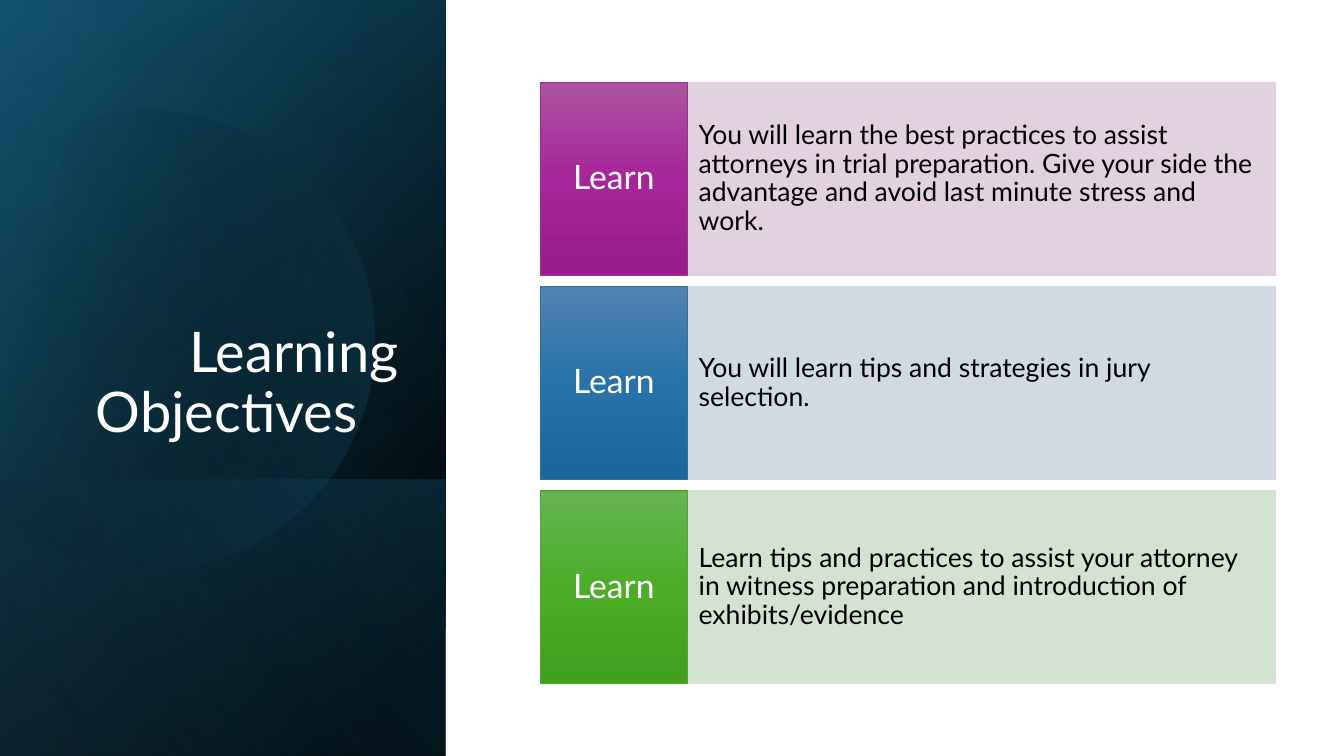
import math
from lxml import etree
from pptx import Presentation
from pptx.dml.color import RGBColor
from pptx.enum import shapes, text
from pptx.oxml import ns
from pptx.util import Inches, Pt

FONT = "Lato"
BLACK = RGBColor(0x00, 0x00, 0x00)
WHITE = RGBColor(0xFF, 0xFF, 0xFF)
NAVY = RGBColor(0x10, 0x48, 0x62)
TEAL = RGBColor(0x15, 0x60, 0x82)
SKY = RGBColor(0x46, 0xB1, 0xE1)


def rgb(value):
    return RGBColor.from_string(value)


TITLE = "Learning Objectives\t"
OBJECTIVES = [
    ("Learn",
     "You will learn the best practices to assist attorneys in trial preparation. "
     "Give your side the advantage and avoid last minute stress and work.",
     rgb("DFCDDC"), rgb("A02B93"), (rgb("AC53A0"), rgb("A62598"), rgb("991C8B"))),
    ("Learn",
     "You will learn tips and strategies in jury selection.",
     rgb("CDD6E0"), rgb("2C71A4"), (rgb("5382AF"), rgb("2772A9"), rgb("1D669C"))),
    ("Learn",
     "Learn tips and practices to assist your attorney in witness preparation "
     "and introduction of exhibits/evidence",
     rgb("D0E1CD"), rgb("4EA72E"), (rgb("66B354"), rgb("4BAD28"), rgb("409F1E"))),
]

PANEL_W, SLIDE_H = 4.42, 7.5
BASE_LAYERS = [
    (0, [(8, BLACK, 100), (100, NAVY, 100)], 50),
    (0, [(0, BLACK, 0), (99, TEAL, 46)], 30),
    (4.76, [(2, TEAL, 29), (100, BLACK, 30)], 130),
]
TOP_LAYER = (0, [(0, BLACK, 0), (99, SKY, 11)], 120)

DISC_CENTER = (1.585, 3.345)
DISC_ROTATION = 343.9
DISC_STOPS = [(29, BLACK, 0), (100, TEAL, 43)]
DISC_START = (1.49, 1.1)
DISC_SEGMENTS = [
    [(2.46, 1.12), (3.35, 1.77), (3.63, 2.75)],
    [(3.97, 3.97), (3.28, 5.23), (2.07, 5.58)],
    [(1.31, 5.8), (0.53, 5.61), (-0.03, 5.14)],
    [(-0.15, 5.03)],
    [(-0.15, 1.75)],
    [(0, 1.61)],
    [(0.23, 1.42), (0.5, 1.28), (0.8, 1.19)],
    [(1.03, 1.13), (1.26, 1.1), (1.49, 1.1)],
]
CURVE_STEPS = 16

LABEL_X, LABEL_W = 5.36, 1.46
BODY_X, BODY_W = LABEL_X + LABEL_W, 5.83
ROW_TOP, ROW_H, ROW_PITCH = 0.82, 1.91, 2.025


def gradient(sp, stops, angle):
    sp.fill.background()
    old = sp._element.spPr.find(ns.qn("a:noFill"))
    grad = etree.Element(ns.qn("a:gradFill"), rotWithShape="1")
    stop_list = etree.SubElement(grad, ns.qn("a:gsLst"))
    for pos, color, opacity in stops:
        stop = etree.SubElement(stop_list, ns.qn("a:gs"), pos=str(pos * 1000))
        clr = etree.SubElement(stop, ns.qn("a:srgbClr"), val=str(color))
        if opacity < 100:
            etree.SubElement(clr, ns.qn("a:alpha"), val=str(opacity * 1000))
    etree.SubElement(grad, ns.qn("a:lin"), ang=str(angle * 60000), scaled="0")
    old.getparent().replace(old, grad)


def add_rect(slide, x, y, w, h):
    sp = slide.shapes.add_shape(shapes.MSO_SHAPE.RECTANGLE,
                                Inches(x), Inches(y), Inches(w), Inches(h))
    sp.shadow.inherit = False
    return sp


def add_layer(slide, top, stops, angle):
    height = SLIDE_H - top
    sp = add_rect(slide, (PANEL_W - height) / 2, top + (height - PANEL_W) / 2,
                  height, PANEL_W)
    sp.rotation = 90
    sp._element.spPr.xfrm.set("flipH", "1")
    sp.line.fill.background()
    gradient(sp, stops, angle)


def disc_points():
    outline = [DISC_START]
    for segment in DISC_SEGMENTS:
        if len(segment) == 1:
            outline += segment
            continue
        control = [outline[-1]] + segment
        for step in range(1, CURVE_STEPS + 1):
            t = step / CURVE_STEPS
            weights = [math.comb(3, i) * t**i * (1 - t)**(3 - i) for i in range(4)]
            outline.append(tuple(sum(w * pt[axis] for w, pt in zip(weights, control))
                                 for axis in (0, 1)))
    turn = math.radians(360 - DISC_ROTATION)
    cx, cy = DISC_CENTER
    return [(cx + (x - cx) * math.cos(turn) - (y - cy) * math.sin(turn),
             cy + (x - cx) * math.sin(turn) + (y - cy) * math.cos(turn))
            for x, y in outline]


def add_disc(slide):
    points = [(Inches(x), Inches(y)) for x, y in disc_points()]
    builder = slide.shapes.build_freeform(*points[0], scale=1.0)
    builder.add_line_segments(points[1:], close=True)
    sp = builder.convert_to_shape()
    sp.shadow.inherit = False
    sp.rotation = DISC_ROTATION
    sp.line.fill.background()
    gradient(sp, DISC_STOPS, 30)


def set_text(sp, content, size, color, align, anchor, inset_x, inset_y):
    tf = sp.text_frame
    tf.word_wrap = True
    tf.vertical_anchor = anchor
    tf.margin_left = tf.margin_right = Inches(inset_x)
    tf.margin_top = tf.margin_bottom = Inches(inset_y)
    p = tf.paragraphs[0]
    p.add_run().text = content
    p.alignment = align
    p.line_spacing = 0.9
    p.font.name, p.font.size = FONT, Pt(size)
    p.font.color.rgb = color


def add_objective(slide, row, label, body, tint, border, shades):
    y = ROW_TOP + row * ROW_PITCH
    middle = text.MSO_ANCHOR.MIDDLE

    sp = add_rect(slide, BODY_X, y, BODY_W, ROW_H)
    sp.line.width = Pt(1)
    for fill in (sp.fill, sp.line.fill):
        fill.solid()
        fill.fore_color.rgb = tint
    for clr in sp._element.spPr.iter(ns.qn("a:srgbClr")):
        etree.SubElement(clr, ns.qn("a:alpha"), val="90000")
    set_text(sp, body, 19, BLACK, text.PP_ALIGN.LEFT, middle, 0.11, 0.49)

    sp = add_rect(slide, LABEL_X, y, LABEL_W, ROW_H)
    sp.line.width = Pt(1)
    sp.line.color.rgb = border
    gradient(sp, [(50 * i, shade, 100) for i, shade in enumerate(shades)], 90)
    set_text(sp, label, 24, WHITE, text.PP_ALIGN.CENTER, middle, 0.08, 0.19)


def main():
    prs = Presentation()
    prs.slide_width, prs.slide_height = Inches(13.33), Inches(SLIDE_H)
    slide = prs.slides.add_slide(prs.slide_layouts[6])

    for layer in BASE_LAYERS:
        add_layer(slide, *layer)
    add_disc(slide)
    add_layer(slide, *TOP_LAYER)

    title = slide.shapes.add_textbox(Inches(0.64), Inches(1.84), Inches(3.41), Inches(2.62))
    set_text(title, TITLE, 40, WHITE, text.PP_ALIGN.RIGHT, text.MSO_ANCHOR.BOTTOM, 0.1, 0.05)

    for row, objective in enumerate(OBJECTIVES):
        add_objective(slide, row, *objective)
    prs.save("out.pptx")


if __name__ == "__main__":
    main()
